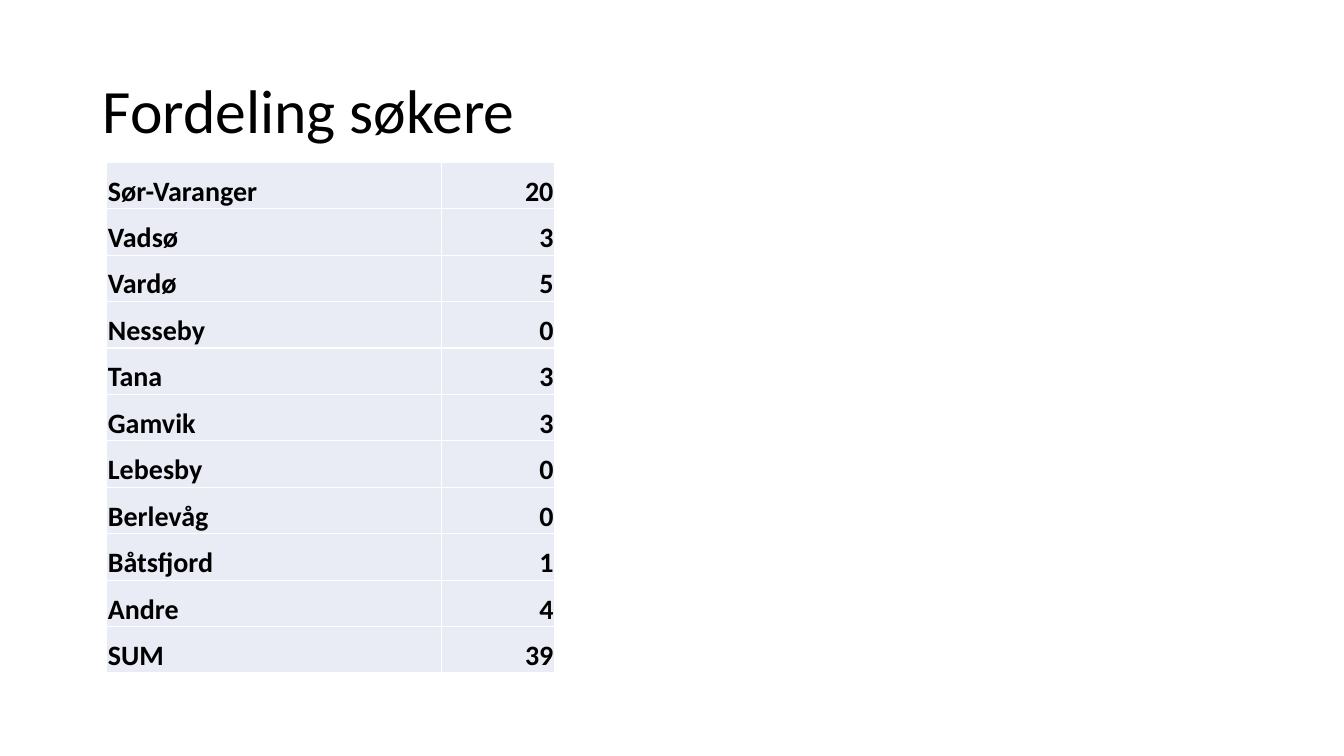
import lxml.etree
import pptx
import pptx.dml.color
import pptx.enum.text
import pptx.oxml.ns
import pptx.util

Inches = pptx.util.Inches
RGBColor = pptx.dml.color.RGBColor
ANCHOR = pptx.enum.text.MSO_ANCHOR
ALIGN = pptx.enum.text.PP_ALIGN

BLACK = RGBColor(0x00, 0x00, 0x00)
WHITE = RGBColor(0xFF, 0xFF, 0xFF)
PALE_BLUE = RGBColor(0xE9, 0xEB, 0xF5)

APPLICANTS = [
    ("Sør-Varanger", 20),
    ("Vadsø", 3),
    ("Vardø", 5),
    ("Nesseby", 0),
    ("Tana", 3),
    ("Gamvik", 3),
    ("Lebesby", 0),
    ("Berlevåg", 0),
    ("Båtsfjord", 1),
    ("Andre", 4),
]


class SlideBuilder:
    """Hold the text style and the current slide, and add elements to it."""

    font_name = "Calibri"
    title_size = 44
    table_size = 20

    def __init__(self, slide):
        self.slide = slide

    def add_run(self, paragraph, text, size, bold=False):
        run = paragraph.add_run()
        run.text = text
        run.font.name = self.font_name
        run.font.size = pptx.util.Pt(size)
        run.font.bold = bold
        run.font.color.rgb = BLACK

    def add_title(self, text, left, top, width, height):
        shape = self.slide.shapes.add_textbox(
            Inches(left), Inches(top), Inches(width), Inches(height))
        frame = shape.text_frame
        frame.word_wrap = True
        frame.vertical_anchor = ANCHOR.MIDDLE
        paragraph = frame.paragraphs[0]
        paragraph.line_spacing = 0.9
        self.add_run(paragraph, text, self.title_size)

    def add_borders(self, cell):
        properties = cell._tc.get_or_add_tcPr()
        qn = pptx.oxml.ns.qn
        for side in ("a:lnL", "a:lnR", "a:lnT", "a:lnB"):
            line = lxml.etree.SubElement(
                properties, qn(side), w=str(pptx.util.Pt(1)))
            fill = lxml.etree.SubElement(line, qn("a:solidFill"))
            lxml.etree.SubElement(fill, qn("a:srgbClr"), val=str(WHITE))

    def fill_cell(self, cell, text, alignment):
        cell.margin_left = cell.margin_right = cell.margin_top = Inches(0.01)
        cell.margin_bottom = 0
        cell.vertical_anchor = ANCHOR.BOTTOM
        self.add_borders(cell)
        cell.fill.solid()
        cell.fill.fore_color.rgb = PALE_BLUE
        paragraph = cell.text_frame.paragraphs[0]
        paragraph.alignment = alignment
        self.add_run(paragraph, text, self.table_size, bold=True)

    def add_table(self, rows, left, top, column_widths, height):
        table = self.slide.shapes.add_table(
            len(rows), len(column_widths), Inches(left), Inches(top),
            Inches(sum(column_widths)), Inches(height)).table
        table.first_row = False
        table.horz_banding = False
        for column, width in zip(table.columns, column_widths):
            column.width = Inches(width)
        for row, (name, count) in zip(table.rows, rows):
            row.height = Inches(height / len(rows))
            self.fill_cell(row.cells[0], name, ALIGN.LEFT)
            self.fill_cell(row.cells[1], str(count), ALIGN.RIGHT)


def main():
    presentation = pptx.Presentation()
    presentation.slide_width = Inches(13.33)
    presentation.slide_height = Inches(7.5)
    slide = presentation.slides.add_slide(presentation.slide_layouts[6])
    builder = SlideBuilder(slide)
    builder.add_title("Fordeling søkere", 0.92, 0.4, 11.5, 1.45)
    total = sum(count for _, count in APPLICANTS)
    builder.add_table(
        APPLICANTS + [("SUM", total)], 1.06, 1.61, (3.32, 1.12), 5.07)
    presentation.save("out.pptx")


if __name__ == "__main__":
    main()
